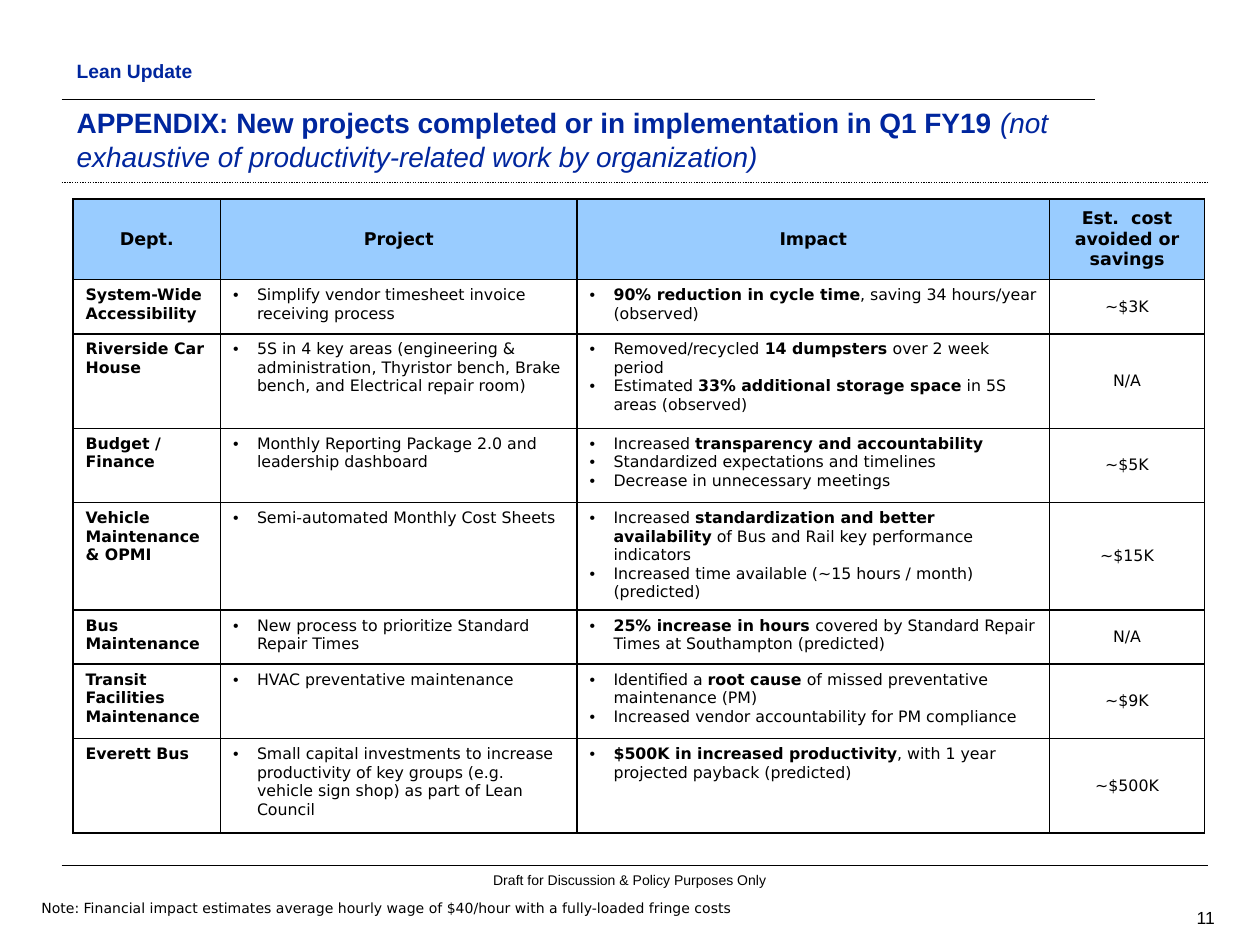
from dataclasses import dataclass

from lxml import etree
from pptx import Presentation
from pptx.dml.color import RGBColor
from pptx.enum.dml import MSO_LINE
from pptx.enum.shapes import MSO_CONNECTOR
from pptx.enum.text import MSO_ANCHOR, PP_ALIGN
from pptx.oxml.ns import qn
from pptx.util import Inches, Pt

LEFT, CENTER, RIGHT = PP_ALIGN.LEFT, PP_ALIGN.CENTER, PP_ALIGN.RIGHT
TOP, MIDDLE, BOTTOM = MSO_ANCHOR.TOP, MSO_ANCHOR.MIDDLE, MSO_ANCHOR.BOTTOM
STRAIGHT, DOTS = MSO_CONNECTOR.STRAIGHT, MSO_LINE.ROUND_DOT


@dataclass(frozen=True)
class Theme:
    """Colours, fonts and type sizes of the slide."""
    ink: str = "000000"
    navy: str = "00269E"
    sky: str = "99CCFF"
    sans: str = "Arial"
    grid: str = "DejaVu Sans"
    title: int = 16
    tag: int = 11
    head: int = 10
    body: int = 9
    small: int = 8


THEME = Theme()
TAG = dict(name=THEME.sans, size=Pt(THEME.tag), bold=True, color=THEME.navy)
TITLE = TAG | dict(size=Pt(THEME.title))
ASIDE = TITLE | dict(bold=False, italic=True)
FOOT = dict(name=THEME.sans, size=Pt(THEME.small), color=THEME.ink)
PAGE = FOOT | dict(size=Pt(THEME.head))
NOTE = FOOT | dict(name=THEME.grid)
BODY = NOTE | dict(size=Pt(THEME.body), bold=False)
STRONG = BODY | dict(bold=True)
HEAD = STRONG | dict(size=Pt(THEME.head))

COLS = [1.17, 2.83, 3.75, 1.23]
ROWS = [0.64, 0.43, 0.75, 0.59, 0.75, 0.43, 0.59, 0.75]
HEADS = ["Dept.", "Project", "Impact", "Est.  cost avoided or savings"]
ITEMS = [
    ("System-Wide Accessibility",
     "Simplify vendor timesheet invoice receiving process",
     ["*90% reduction in cycle time*, saving 34 hours/year (observed)"],
     "~$3K"),
    ("Riverside Car House",
     "5S in 4 key areas (engineering & administration, Thyristor bench, "
     "Brake bench, and Electrical repair room)",
     ["Removed/recycled* 14 dumpsters *over 2 week period",
      "Estimated *33% additional storage space *in 5S areas (observed)"],
     "N/A"),
    ("Budget / Finance",
     "Monthly Reporting Package 2.0 and leadership dashboard",
     ["Increased *transparency and accountability*",
      "Standardized expectations and timelines",
      "Decrease in unnecessary meetings"],
     "~$5K"),
    ("Vehicle Maintenance & OPMI",
     "Semi-automated Monthly Cost Sheets",
     ["Increased *standardization and better availability* of Bus and Rail "
      "key performance indicators",
      "Increased time available (~15 hours / month) (predicted)"],
     "~$15K"),
    ("Bus Maintenance",
     "New process to prioritize Standard Repair Times",
     ["*25% increase in hours *covered by Standard Repair Times at "
      "Southampton (predicted)"],
     "N/A"),
    ("Transit Facilities Maintenance",
     "HVAC preventative maintenance",
     ["Identified a *root cause *of missed preventative maintenance (PM)",
      "Increased vendor accountability for PM compliance"],
     "~$9K"),
    ("Everett Bus",
     "Small capital investments to increase productivity of key groups "
     "(e.g. vehicle sign shop) as part of Lean Council",
     ["*$500K in increased productivity*, with 1 year projected payback "
      "(predicted)"],
     "~$500K"),
]


def style(font, form):
    """Set each format value on a font."""
    for key, val in form.items():
        if key == "color":
            font.color.rgb = RGBColor.from_string(val)
        else:
            setattr(font, key, val)


def write(para, runs, align=LEFT):
    """Fill a paragraph with (text, format) runs."""
    para.alignment = align
    for text, form in runs:
        run = para.add_run()
        run.text = text
        style(run.font, form)


def label(slide, box, runs, align=LEFT, anchor=TOP):
    """Add a wrapped text box."""
    frame = slide.shapes.add_textbox(*map(Inches, box)).text_frame
    frame.word_wrap = True
    frame.vertical_anchor = anchor
    write(frame.paragraphs[0], runs, align)


def rule(slide, x, y, width, weight, dash=None):
    """Add a level line without a shadow."""
    line = slide.shapes.add_connector(
        STRAIGHT, Inches(x), Inches(y), Inches(x + width), Inches(y))
    line.line.color.rgb = RGBColor.from_string(THEME.ink)
    line.line.width = Pt(weight)
    line.line.dash_style = dash
    etree.SubElement(line._element.spPr, qn("a:effectLst"))


def border(cell):
    """Draw a thin line on all four sides of a cell."""
    props = cell._tc.get_or_add_tcPr()
    for side in ("lnL", "lnR", "lnT", "lnB"):
        edge = etree.SubElement(props, qn(f"a:{side}"), w=str(Pt(1)))
        fill = etree.SubElement(edge, qn("a:solidFill"))
        etree.SubElement(fill, qn("a:srgbClr"), val=THEME.ink)


def bullet(para):
    """Give a paragraph a hanging bullet."""
    props = para._p.get_or_add_pPr()
    props.set("marL", str(Inches(0.19)))
    props.set("indent", str(-Inches(0.19)))
    etree.SubElement(props, qn("a:buFont"), typeface=THEME.sans)
    etree.SubElement(props, qn("a:buChar"), char="•")


def points(cell, texts):
    """List texts as bullets, with starred parts in bold."""
    frame = cell.text_frame
    for i, text in enumerate(texts):
        para = frame.add_paragraph() if i else frame.paragraphs[0]
        bullet(para)
        parts = enumerate(text.split("*"))
        write(para, [(part, STRONG if n % 2 else BODY)
                     for n, part in parts if part])


def heading(slide, box):
    """Place the section tag, the title and their rules."""
    x, y, w, h = box
    rule(slide, x, y + 0.37, 8.2, 1)
    rule(slide, x, y + h, w, 0.75, DOTS)
    label(slide, (x + 0.02, y, 7.99, 0.25), [("Lean Update", TAG)])
    label(slide, (x + 0.02, y + 0.49, 8.48, 0.51), [
        ("APPENDIX: New projects completed or in implementation in Q1 FY19 ",
         TITLE),
        ("(not exhaustive of productivity-related work by organization)",
         ASIDE)], anchor=BOTTOM)


def projects(slide, box):
    """Place the table of projects."""
    table = slide.shapes.add_table(
        len(ROWS), len(COLS), *map(Inches, box)).table
    for col, width in zip(table.columns, COLS):
        col.width = Inches(width)
    for row, height in zip(table.rows, ROWS):
        row.height = Inches(height)
    for cell in table.iter_cells():
        border(cell)
        cell.fill.background()
    for cell, text in zip(table.rows[0].cells, HEADS):
        cell.fill.solid()
        cell.fill.fore_color.rgb = RGBColor.from_string(THEME.sky)
        cell.vertical_anchor = MIDDLE
        write(cell.text_frame.paragraphs[0], [(text, HEAD)], CENTER)
    for r, (dept, task, gains, cost) in enumerate(ITEMS, 1):
        first, second, third, last = table.rows[r].cells
        write(first.text_frame.paragraphs[0], [(dept, STRONG)])
        points(second, [task])
        points(third, gains)
        last.vertical_anchor = MIDDLE
        write(last.text_frame.paragraphs[0], [(cost, BODY)], CENTER)


def footer(slide, box):
    """Place the bottom rule, the notice, the note and the page number."""
    x, y, w, h = box
    rule(slide, x, y, w, 0.75)
    label(slide, (x + 3.08, y, 2.86, 0.24),
          [("Draft for Discussion & Policy Purposes Only", FOOT)], CENTER)
    label(slide, (x - 0.26, y + 0.22, 9.33, 0.24),
          [("Note: Financial impact estimates average hourly wage of $40/hour "
            "with a fully-loaded fringe costs", NOTE)])
    label(slide, (x + 8.42, y + h - 0.25, 0.83, 0.25), [("11", PAGE)],
          RIGHT, MIDDLE)


def main():
    """Build and save the slide."""
    deck = Presentation()
    deck.slide_width, deck.slide_height = Inches(10), Inches(7.5)
    slide = deck.slides.add_slide(deck.slide_layouts[6])
    heading(slide, (0.49, 0.42, 9.1, 1.03))
    projects(slide, (0.58, 1.58, sum(COLS), sum(ROWS)))
    footer(slide, (0.49, 6.87, 9.1, 0.54))
    deck.save("out.pptx")


if __name__ == "__main__":
    main()
